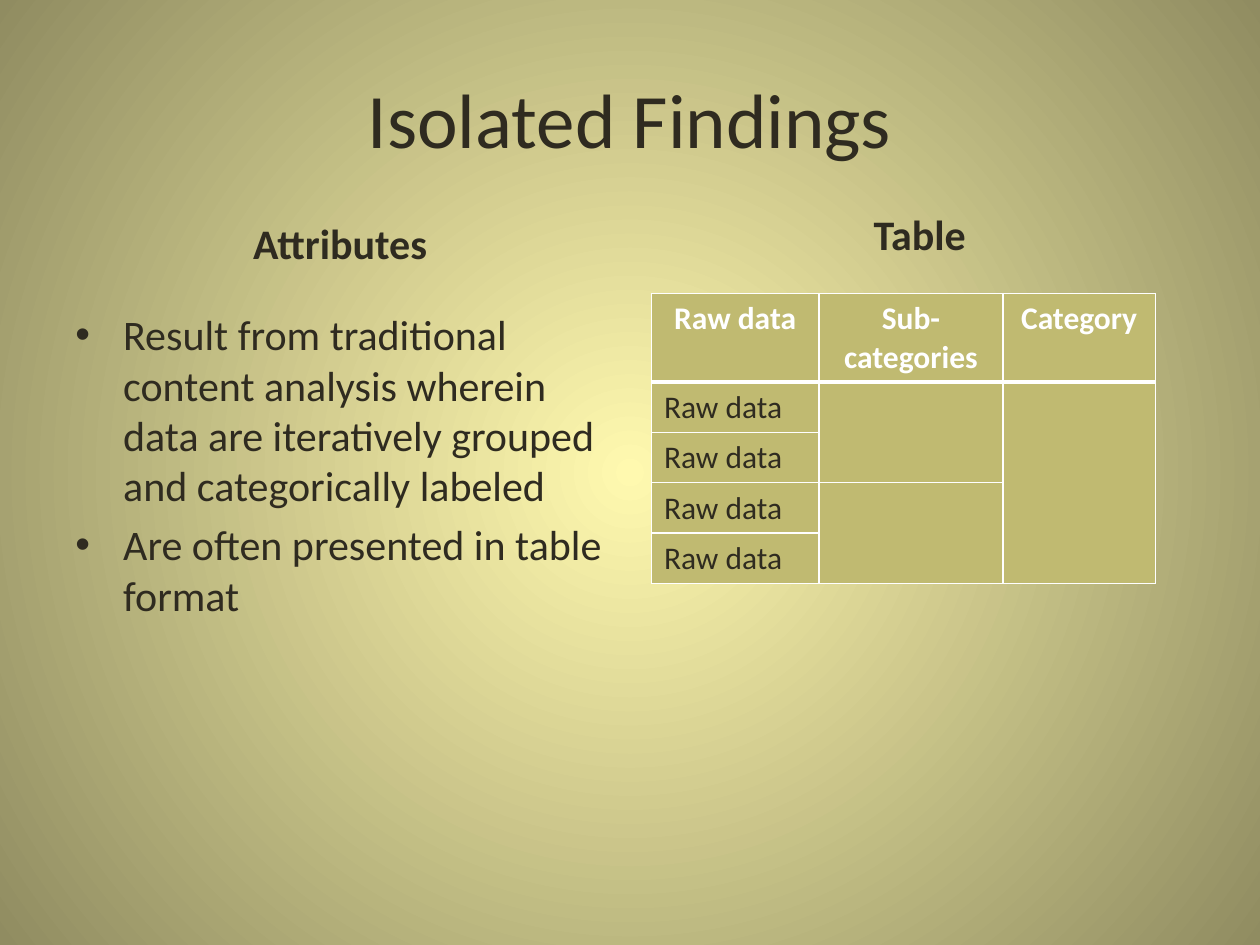
from dataclasses import dataclass

from pptx import Presentation
from pptx.dml.color import RGBColor
from pptx.enum.text import MSO_ANCHOR as Anchor, PP_ALIGN as Align
from pptx.oxml import parse_xml
from pptx.oxml.ns import nsdecls, qn
from pptx.oxml.xmlchemy import OxmlElement as Node
from pptx.slide import Slide
from pptx.table import _Cell as Cell
from pptx.text.text import TextFrame as Frame
from pptx.util import Inches, Pt

INK = RGBColor(0x2F, 0x2B, 0x20)
WHITE = RGBColor(0xFF, 0xFF, 0xFF)
OLIVE = RGBColor(0xC0, 0xBA, 0x71)
GLOW = RGBColor(0xFF, 0xF9, 0xAF)
EDGE = RGBColor(0x90, 0x8C, 0x61)

WIDE, HIGH = Inches(10), Inches(7.5)
LEFT, RIGHT, HALF = 0.05, 0.51, 0.44
COLS = (1.33, 1.46, 1.21)
ROWS = (0.69, 0.4, 0.4, 0.4, 0.4)
HEADS = ("Raw data", "Sub-categories", "Category")


@dataclass(frozen=True)
class Block:
    x: float
    y: float
    w: float
    h: float
    lines: tuple[str, ...]
    size: float = 24
    bold: bool = False
    align: Align = Align.CENTER
    anchor: Anchor = Anchor.BOTTOM
    gap: float = 4.8
    dots: bool = False


@dataclass(frozen=True)
class Span:
    row: int
    col: int
    count: int


SPANS = (Span(1, 1, 2), Span(3, 1, 2), Span(1, 2, 4))
BLOCKS = (
    Block(LEFT, 0.04, 0.9, 0.17, ("Isolated Findings",), size=44,
          anchor=Anchor.MIDDLE, gap=0),
    Block(LEFT, 0.2, HALF, 0.09, ("Attributes",), bold=True),
    Block(LEFT, 0.32, HALF, 0.58, (
        "Result from traditional content analysis wherein data are "
        "iteratively grouped and categorically labeled",
        "Are often presented in table format",
    ), align=Align.LEFT, anchor=Anchor.TOP, dots=True),
    Block(RIGHT, 0.19, HALF, 0.09, ("Table",), bold=True),
)


def write(frame: Frame, *lines: str, size: float = 18, bold: bool = False,
          color: RGBColor = INK, align: Align = Align.LEFT,
          gap: float = 0, dots: bool = False) -> None:
    for i, line in enumerate(lines):
        para = frame.add_paragraph() if i else frame.paragraphs[0]
        para.alignment = align
        para.space_before = Pt(gap)
        run = para.add_run()
        run.text = line
        font = run.font
        font.name, font.size, font.bold = "Calibri", Pt(size), bold
        font.color.rgb = color
        if dots:
            props = para._p.get_or_add_pPr()
            props.set("marL", str(Inches(0.38)))
            props.set("indent", str(Inches(-0.38)))
            props.append(parse_xml(f'<a:buFont {nsdecls("a")} typeface="Arial"/>'))
            props.append(parse_xml(f'<a:buChar {nsdecls("a")} char="•"/>'))


def paint(slide: Slide) -> None:
    fill = slide.background.fill
    fill.gradient()
    for stop, color in zip(fill.gradient_stops, (GLOW, EDGE)):
        stop.color.rgb = color
    grad = slide.element.find(f".//{qn('a:gradFill')}")
    grad.remove(grad.find(qn("a:lin")))
    ring = Node("a:path")
    ring.set("path", "circle")
    rect = Node("a:fillToRect")
    for side in "ltrb":
        rect.set(side, "50000")
    ring.append(rect)
    grad.append(ring)


def place(slide: Slide, block: Block) -> None:
    box = slide.shapes.add_textbox(
        int(WIDE * block.x), int(HIGH * block.y),
        int(WIDE * block.w), int(HIGH * block.h))
    frame = box.text_frame
    frame.word_wrap = True
    frame.vertical_anchor = block.anchor
    write(frame, *block.lines, size=block.size, bold=block.bold,
          align=block.align, gap=block.gap, dots=block.dots)


def border(cell: Cell, row: int) -> None:
    props = cell._tc.get_or_add_tcPr()
    thick = {"T": 3 if row == 1 else 1, "B": 3 if row == 0 else 1}
    for i, side in enumerate("LRTB"):
        width = Pt(thick.get(side, 1))
        props.insert(i, parse_xml(
            f'<a:ln{side} {nsdecls("a")} w="{width}"><a:solidFill>'
            f'<a:srgbClr val="{WHITE}"/></a:solidFill></a:ln{side}>'))


def tabulate(slide: Slide) -> None:
    table = slide.shapes.add_table(
        len(ROWS), len(COLS), Inches(5.17), Inches(2.33),
        Inches(sum(COLS)), Inches(sum(ROWS))).table
    for col, width in zip(table.columns, COLS):
        col.width = Inches(width)
    for r, high in enumerate(ROWS):
        table.rows[r].height = Inches(high)
        for c, head in enumerate(HEADS):
            cell = table.cell(r, c)
            cell.fill.solid()
            cell.fill.fore_color.rgb = OLIVE
            border(cell, r)
            if r == 0:
                write(cell.text_frame, head, bold=True, color=WHITE,
                      align=Align.CENTER)
            elif c == 0:
                write(cell.text_frame, HEADS[0])
    for span in SPANS:
        last = table.cell(span.row + span.count - 1, span.col)
        table.cell(span.row, span.col).merge(last)


def main() -> None:
    deck = Presentation()
    deck.slide_width, deck.slide_height = WIDE, HIGH
    slide = deck.slides.add_slide(deck.slide_layouts[6])
    paint(slide)
    for block in BLOCKS:
        place(slide, block)
    tabulate(slide)
    deck.save("out.pptx")


if __name__ == "__main__":
    main()
